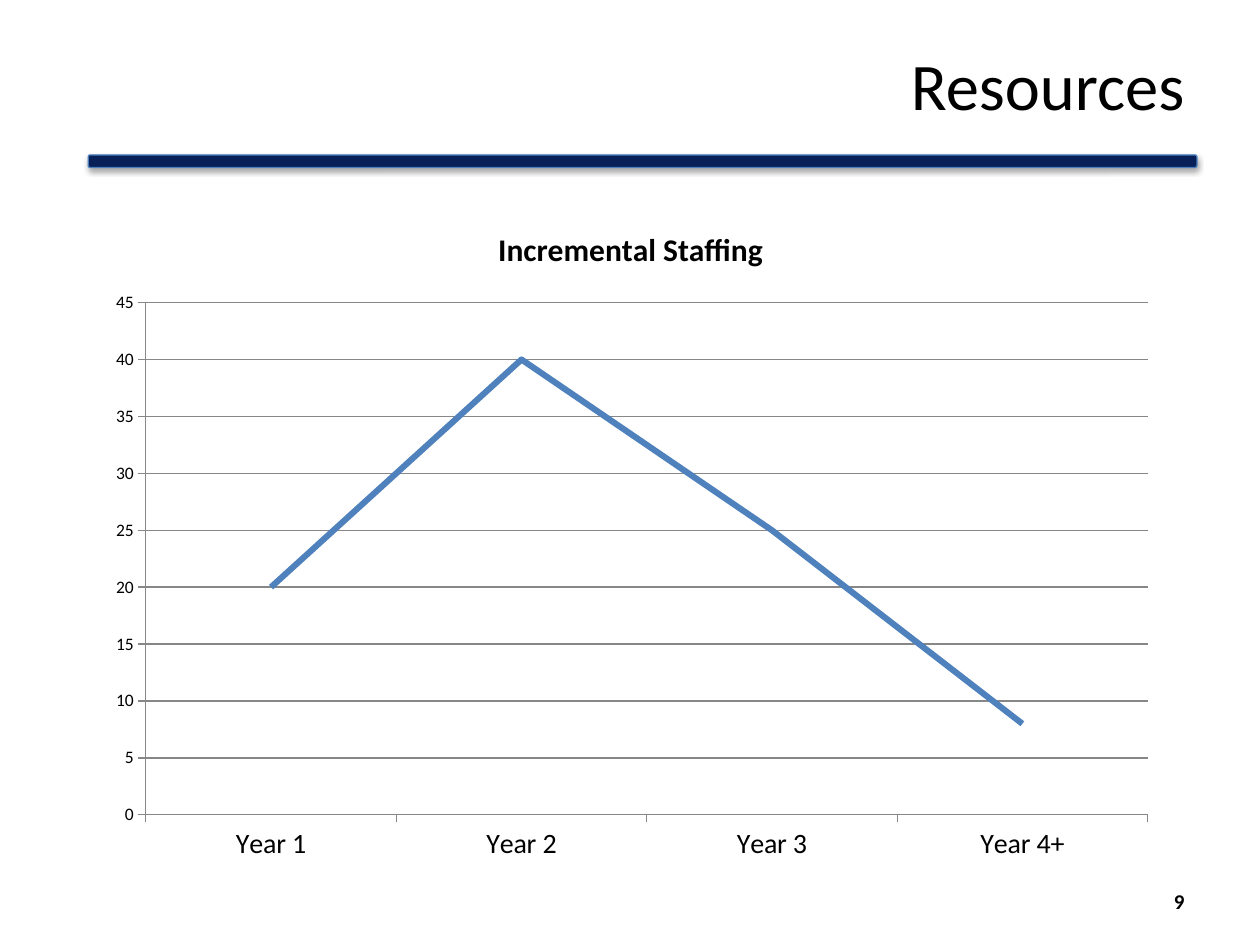
from lxml import etree
from pptx import Presentation, util as u
from pptx.chart.data import CategoryChartData
from pptx.dml.color import RGBColor
from pptx.enum import chart as ch, shapes, text
from pptx.oxml import parse_xml
from pptx.oxml.ns import nsdecls, qn

HUES = {"ink": "000000", "navy": "072058", "edge": "4B7EBC",
        "line": "4F81BD", "grid": "878787"}
FACE = "Calibri"


def hue(name):
    return RGBColor.from_string(HUES[name])


def label(box, words, size, anchor, bold=False):
    area = slide.shapes.add_textbox(*[u.Inches(n) for n in box])
    frame = area.text_frame
    frame.word_wrap = True
    frame.vertical_anchor = anchor
    para = frame.paragraphs[0]
    para.alignment = text.PP_ALIGN.RIGHT
    run = para.add_run()
    run.text = words
    run.font.name, run.font.size, run.font.bold = FACE, u.Pt(size), bold
    run.font.color.rgb = hue("ink")


deck = Presentation()
deck.slide_width, deck.slide_height = u.Inches(10), u.Inches(7.5)
slide = deck.slides.add_slide(deck.slide_layouts[6])

# Rule under the heading, with a soft shadow
bar = slide.shapes.add_shape(
    shapes.MSO_SHAPE.ROUNDED_RECTANGLE,
    u.Inches(0.7), u.Inches(1.23), u.Inches(8.8), u.Inches(0.1))
bar.fill.solid()
bar.fill.fore_color.rgb = hue("navy")
bar.line.color.rgb = hue("edge")
bar.line.width = u.Pt(0.75)
bar.shadow.inherit = False
glow = bar._element.spPr.find(qn("a:effectLst"))
glow.append(parse_xml(
    f'<a:outerShdw {nsdecls("a")} blurRad="{u.Pt(3.1)}" dist="{u.Pt(1.8)}" '
    f'dir="5400000" rotWithShape="0"><a:srgbClr val="{HUES["ink"]}">'
    '<a:alpha val="35000"/></a:srgbClr></a:outerShdw>'))

# Heading and page number
label((0.5, 0.3, 9, 1.25), "Resources", 38, text.MSO_ANCHOR.TOP)
label((7.17, 6.95, 2.33, 0.4), "9", 12, text.MSO_ANCHOR.MIDDLE, True)

# Staffing chart
data = CategoryChartData()
data.categories = ["Year 1", "Year 2", "Year 3", "Year 4+"]
data.add_series("Incremental Staffing", [20, 40, 25, 8])
chart = slide.shapes.add_chart(
    ch.XL_CHART_TYPE.LINE, u.Inches(0.73), u.Inches(1.6),
    u.Inches(8.55), u.Inches(5.35), data).chart
chart.font.name, chart.font.size = FACE, u.Pt(10)
chart.font.color.rgb = hue("ink")
chart.has_legend = False

# Chart title
chart.has_title = True
run = chart.chart_title.text_frame.paragraphs[0].add_run()
run.text = "Incremental Staffing"
run.font.name, run.font.size, run.font.bold = FACE, u.Pt(18), True
run.font.color.rgb = hue("ink")
chart.chart_title.include_in_layout = False

# Series line
plot = chart.plots[0]
plot.vary_by_categories = False
row = plot.series[0]
row.smooth = False
row.marker.style = ch.XL_MARKER_STYLE.NONE
row.format.line.color.rgb = hue("line")
row.format.line.width = u.Pt(3.5)

# Axes and gridlines
years, staff = chart.category_axis, chart.value_axis
for axis, size in ((years, 16), (staff, 10)):
    axis.major_tick_mark = ch.XL_TICK_MARK.OUTSIDE
    axis.minor_tick_mark = ch.XL_TICK_MARK.NONE
    axis.tick_labels.font.size = u.Pt(size)
    axis.format.line.color.rgb = hue("grid")
    axis.format.line.width = u.Pt(0.75)
staff.minimum_scale, staff.maximum_scale, staff.major_unit = 0, 45, 5
staff.has_major_gridlines = True
rule = staff.major_gridlines.format.line
rule.color.rgb = hue("grid")
rule.width = u.Pt(0.75)

# Plot area inside the chart frame
area = chart._chartSpace.chart.plotArea
for old in area.findall(qn("c:layout")):
    area.remove(old)
grid = parse_xml(f'<c:layout {nsdecls("c")}><c:manualLayout/></c:layout>')
for tag, val in (("layoutTarget", "inner"), ("xMode", "edge"),
                 ("yMode", "edge"), ("x", "0.05"), ("y", "0.15"),
                 ("w", "0.93"), ("h", "0.76")):
    etree.SubElement(grid[0], qn("c:" + tag)).set("val", val)
area.insert(0, grid)

deck.save("out.pptx")
